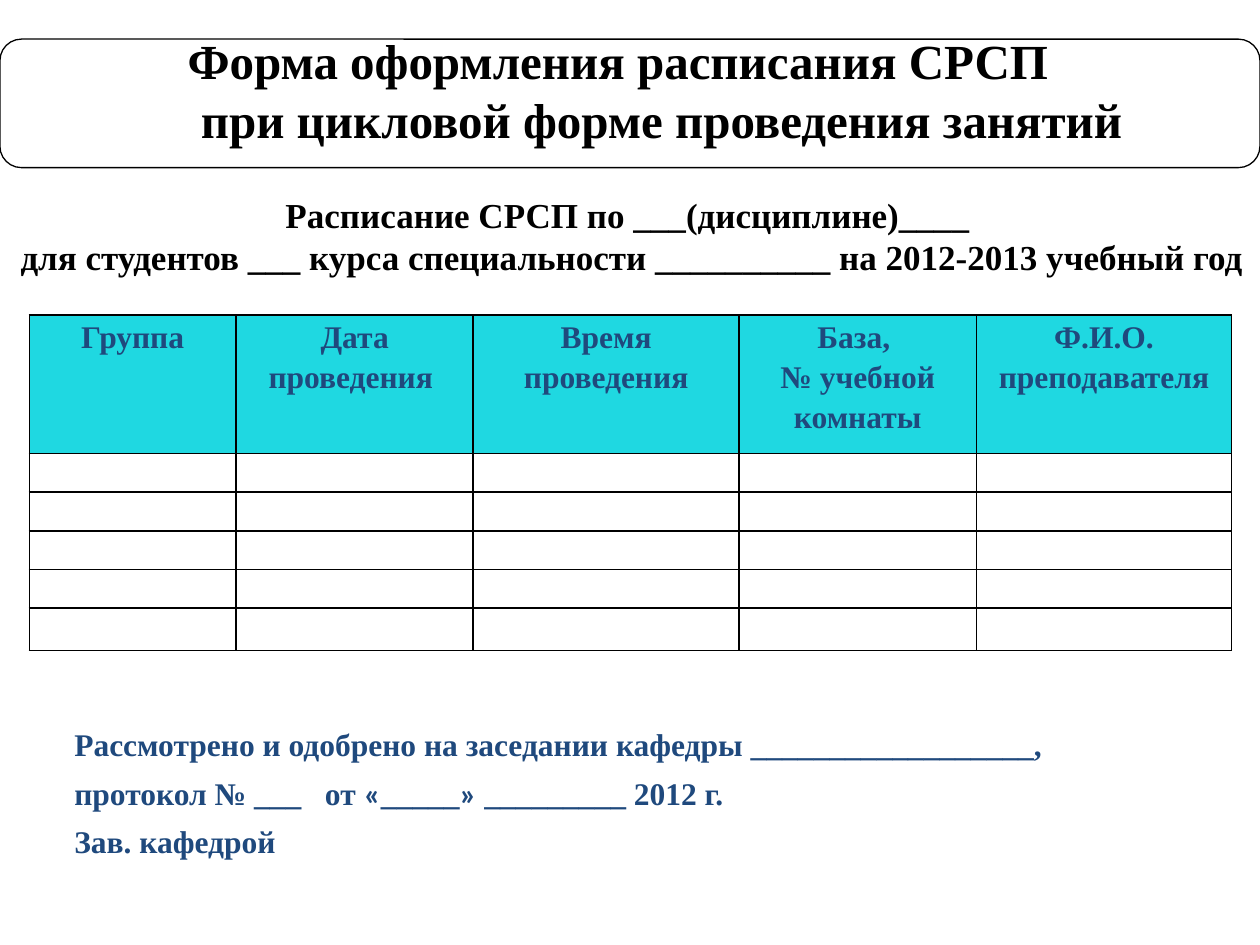
from lxml import etree
from pptx import Presentation
from pptx.dml.color import RGBColor
from pptx.enum.shapes import MSO_SHAPE
from pptx.enum.text import MSO_ANCHOR, MSO_AUTO_SIZE, PP_ALIGN
from pptx.oxml.ns import qn
from pptx.util import Cm, Pt

ROUNDED = MSO_SHAPE.ROUNDED_RECTANGLE
MIDDLE = MSO_ANCHOR.MIDDLE
GROW = MSO_AUTO_SIZE.SHAPE_TO_FIT_TEXT
CENTER, LEFT = PP_ALIGN.CENTER, PP_ALIGN.LEFT
BLACK, WHITE, NAVY, TURQUOISE = "000000", "FFFFFF", "1F497D", "1FD8E1"
SERIF, SANS = "Times New Roman", "Calibri"

TITLE = ["Форма оформления расписания СРСП  ", "при цикловой форме проведения занятий"]
SUBTITLE = [
    "Расписание СРСП по ___(дисциплине)____ ",
    "для студентов ___ курса специальности __________ на 2012-2013 учебный год",
]
HEADINGS = [
    ["Группа"],
    ["Дата проведения "],
    ["Время проведения"],
    ["База, ", "№ учебной комнаты"],
    ["Ф.И.О. преподавателя"],
]
APPROVAL = [
    "Рассмотрено и одобрено на заседании кафедры __________________,",
    ["протокол № ___   от ", "«", "_____", "»", " _________ 2012 г."],
    "Зав. кафедрой",
]
COLUMN_WIDTHS = [4.17, 4.78, 5.36, 4.78, 5.15]
ROW_HEIGHTS = [2.79] + [0.78] * 4 + [0.85]


def rgb(hex_string):
    """Turn a hex string into a colour."""
    return RGBColor.from_string(hex_string)


def apply(target, formats):
    """Set every attribute named in formats on the target."""
    for name, value in formats.items():
        setattr(target, name, value)


def write(frame, lines, size, color, formats):
    """Fill a text frame with bold paragraphs, each a string or a list of runs."""
    for index, line in enumerate(lines):
        paragraph = frame.paragraphs[0] if index == 0 else frame.add_paragraph()
        apply(paragraph, formats)
        for words in [line] if isinstance(line, str) else line:
            run = paragraph.add_run()
            run.text = words
            font = SANS if words in "«»" else SERIF
            apply(run.font, {"name": font, "size": Pt(size), "bold": True})
            run.font.color.rgb = rgb(color)


def add_text(slide, box, lines, size, color, formats):
    """Place a wrapped, vertically centred text box and return its frame."""
    frame = slide.shapes.add_textbox(*map(Cm, box)).text_frame
    apply(frame, {"word_wrap": True, "vertical_anchor": MIDDLE, "auto_size": GROW})
    write(frame, lines, size, color, formats)
    return frame


def add_title(slide, left, top, width, height):
    """Draw the rounded banner with the two-line title over it."""
    banner = slide.shapes.add_shape(
        ROUNDED, Cm(left), Cm(top + 0.3), Cm(width), Cm(height - 0.05))
    banner.shadow.inherit = False
    banner.fill.solid()
    banner.fill.fore_color.rgb = rgb(WHITE)
    banner.line.color.rgb = rgb(BLACK)
    banner.line.width = Pt(0.75)
    frame = add_text(slide, (left, top, width, height), TITLE, 28, BLACK,
                     {"alignment": CENTER})
    frame.paragraphs[1]._p.get_or_add_pPr().set("marL", str(Cm(1.27)))


def add_borders(cell):
    """Give a cell thin black lines on all four sides."""
    for side in ("a:lnL", "a:lnR", "a:lnT", "a:lnB"):
        border = etree.SubElement(cell._tc.get_or_add_tcPr(), qn(side), w=str(Pt(1)))
        fill = etree.SubElement(border, qn("a:solidFill"))
        etree.SubElement(fill, qn("a:srgbClr"), val=BLACK)


def add_schedule(slide, left, top):
    """Build the blank timetable under its heading row."""
    table = slide.shapes.add_table(
        len(ROW_HEIGHTS), len(COLUMN_WIDTHS), Cm(left), Cm(top),
        Cm(sum(COLUMN_WIDTHS)), Cm(sum(ROW_HEIGHTS))).table
    for column, width in zip(table.columns, COLUMN_WIDTHS):
        column.width = Cm(width)
    for row, height in zip(table.rows, ROW_HEIGHTS):
        row.height = Cm(height)
    margins = {"margin_left": Cm(0.18), "margin_right": Cm(0.18),
               "margin_top": 0, "margin_bottom": 0}
    for cell in table.iter_cells():
        apply(cell, margins)
        add_borders(cell)
        cell.fill.background()
    for cell, heading in zip(table.rows[0].cells, HEADINGS):
        cell.fill.solid()
        cell.fill.fore_color.rgb = rgb(TURQUOISE)
        write(cell.text_frame, heading, 18, NAVY,
              {"alignment": CENTER, "line_spacing": 1.15})


def add_approval(slide, box):
    """Place the approval lines with a first-line indent."""
    frame = add_text(slide, box, APPROVAL, 18, NAVY,
                     {"alignment": LEFT, "space_before": Pt(6)})
    for paragraph in frame.paragraphs:
        paragraph._p.get_or_add_pPr().set("indent", str(Cm(1.25)))


def main():
    """Assemble and save the slide."""
    deck = Presentation()
    apply(deck, {"slide_width": Cm(25.4), "slide_height": Cm(19.05)})
    slide = deck.slides.add_slide(deck.slide_layouts[6])
    add_title(slide, 0, 0.49, 25.4, 2.64)
    add_text(slide, (0.08, 3.76, 25.32, 1.96), SUBTITLE, 20, BLACK,
             {"alignment": CENTER})
    add_schedule(slide, 0.59, 6.35)
    add_approval(slide, (0, 14.48, 23.62, 3))
    deck.save("out.pptx")


if __name__ == "__main__":
    main()
